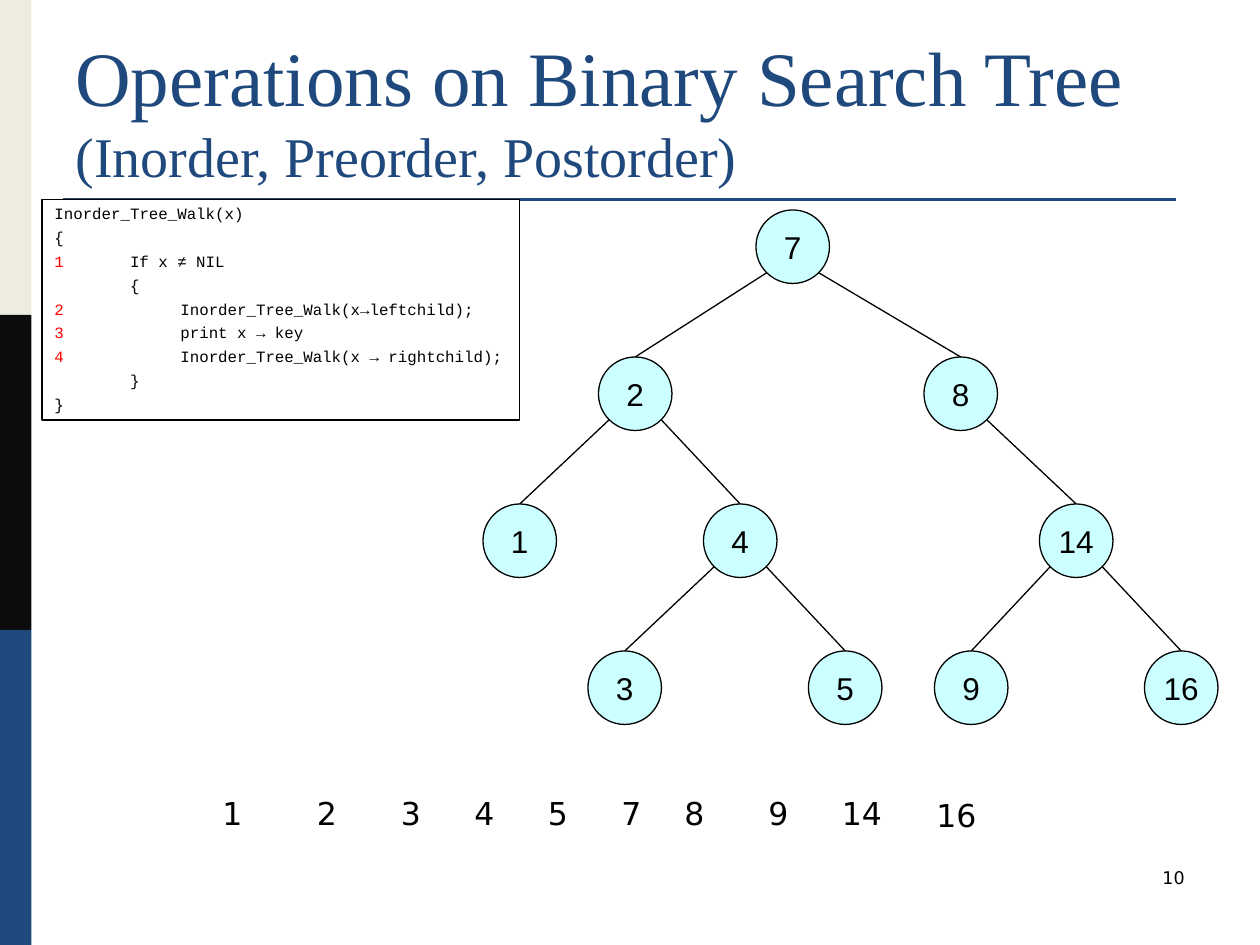
import math

import pptx
import pptx.dml.color
import pptx.enum.shapes
import pptx.enum.text
import pptx.oxml
import pptx.oxml.ns
import pptx.util

Pt = pptx.util.Pt
SHAPE = pptx.enum.shapes.MSO_SHAPE
ALIGN = pptx.enum.text.PP_ALIGN
ANCHOR = pptx.enum.text.MSO_ANCHOR

THEME = {
    "navy": "1F497D", "cream": "EEECE1", "ink": "0C0C0C", "black": "000000",
    "white": "FFFFFF", "red": "FF0000", "node": "CCFFFF",
    "title": 44, "subtitle": 32, "label": 18, "page": 10, "code": 9,
    "serif": "Times New Roman", "sans": "Arial", "mono": "Courier New", "plain": "DejaVu Sans",
}

TITLE = "Operations on Binary Search Tree"
SUBTITLE = "(Inorder, Preorder, Postorder)"
PAGE = "10"
BANDS = ["cream", "ink", "navy"]

# line number, indent level, code
CODE = [
    ("", 0, "Inorder_Tree_Walk(x)"),
    ("", 0, "{"),
    ("1", 1, "If x ≠ NIL"),
    ("", 1, "{"),
    ("2", 2, "Inorder_Tree_Walk(x→leftchild);"),
    ("3", 2, "print x → key"),
    ("4", 2, "Inorder_Tree_Walk(x → rightchild);"),
    ("", 1, "}"),
    ("", 0, "}"),
]
INDENTS = [0, 43.2, 72]

# key: (left edge, depth, parent key)
TREE = {
    7: (432, 0, None),
    2: (342, 1, 7), 8: (528, 1, 7),
    1: (276, 2, 2), 4: (402, 2, 2), 14: (594, 2, 8),
    3: (336, 3, 4), 5: (462, 3, 4), 9: (534, 3, 14), 16: (654, 3, 14),
}
NODE, TREE_TOP, LEVEL = 42, 120, 84

# left edge of each key in the printed order
OUTPUT_LEFTS = [120, 174, 222, 264, 306, 348, 384, 432, 474, 528]
OUTPUT_TOP = 450


def rgb(name):
    return pptx.dml.color.RGBColor.from_string(THEME[name])


def write(p, text, size="label", font="plain", color="black", align=None):
    """Append one formatted run to paragraph p."""
    r = p.add_run()
    r.text = text
    r.font.size = Pt(THEME[size])
    r.font.name = THEME[font]
    r.font.color.rgb = rgb(color)
    if align is not None:
        p.alignment = align


def add_shape(slide, kind, box, fill, line=None):
    sp = slide.shapes.add_shape(kind, *map(Pt, box))
    sp.shadow.inherit = False
    sp.fill.solid()
    sp.fill.fore_color.rgb = rgb(fill)
    if line:
        sp.line.color.rgb = rgb(line)
        sp.line.width = Pt(0.75)
    else:
        sp.line.fill.background()
    return sp


def add_line(slide, start, end, color="black", width=0.75):
    line = slide.shapes.add_connector(
        pptx.enum.shapes.MSO_CONNECTOR.STRAIGHT, *map(Pt, start + end))
    line.line.color.rgb = rgb(color)
    line.line.width = Pt(width)
    line._element.spPr.append(pptx.oxml.parse_xml(
        "<a:effectLst %s/>" % pptx.oxml.ns.nsdecls("a")))
    return line


def add_text_box(slide, box):
    tf = slide.shapes.add_textbox(*map(Pt, box)).text_frame
    tf.word_wrap = True
    return tf


def set_tab(p, position):
    p._p.get_or_add_pPr().append(pptx.oxml.parse_xml(
        '<a:tabLst %s><a:tab pos="%d" algn="l"/></a:tabLst>'
        % (pptx.oxml.ns.nsdecls("a"), Pt(position))))


def add_frame(slide):
    for i, color in enumerate(BANDS):
        add_shape(slide, SHAPE.RECTANGLE, (0, 180 * i, 18, 180), color)
    add_line(slide, (36, 114), (672, 114), "navy", 1.5)

    tf = add_text_box(slide, (36, 21.6, 648, 90))
    tf.vertical_anchor = ANCHOR.BOTTOM
    p = tf.paragraphs[0]
    write(p, TITLE, size="title", font="serif", color="navy")
    p.add_line_break()
    write(p, SUBTITLE, size="subtitle", font="serif", color="navy")

    tf = add_text_box(slide, (516, 492, 168, 36))
    write(tf.paragraphs[0], PAGE, size="page", align=ALIGN.RIGHT)


def add_tree(slide):
    nodes = {}
    for key, (left, depth, parent) in TREE.items():
        box = (left, TREE_TOP + LEVEL * depth, NODE, NODE)
        sp = nodes[key] = add_shape(slide, SHAPE.OVAL, box, "node", "black")
        tf = sp.text_frame
        tf.word_wrap = False
        tf.vertical_anchor = ANCHOR.MIDDLE
        write(tf.paragraphs[0], str(key), font="sans", align=ALIGN.CENTER)
        if parent is None:
            continue
        # The edge leaves the parent's circle at 45 degrees below its centre.
        top = nodes[parent]
        reach = NODE / 2 * math.sqrt(0.5)
        side = -1 if key < parent else 1
        start = (top.left.pt + NODE / 2 + side * reach, top.top.pt + NODE / 2 + reach)
        edge = add_line(slide, start, (left + NODE / 2, box[1]))
        edge.end_connect(sp, 0)


def add_output(slide):
    for key, left in zip(sorted(TREE), OUTPUT_LEFTS):
        top = OUTPUT_TOP + (1.5 if key == max(TREE) else 0)
        write(add_text_box(slide, (left, top, 48, 28.8)).paragraphs[0], str(key))


def add_code(slide):
    sp = add_shape(slide, SHAPE.RECTANGLE, (24, 114, 273, 126), "white", "black")
    tf = sp.text_frame
    tf.vertical_anchor = ANCHOR.TOP
    for i, (number, level, code) in enumerate(CODE):
        p = tf.add_paragraph() if i else tf.paragraphs[0]
        p.alignment = ALIGN.LEFT
        p.line_spacing = 0.9
        p.space_before = Pt(3.9)
        if level:
            set_tab(p, INDENTS[level])
            write(p, number + "\t", size="code", font="mono", color="red")
        write(p, code, size="code", font="mono")


def main():
    prs = pptx.Presentation()
    prs.slide_width, prs.slide_height = Pt(720), Pt(540)
    slide = prs.slides.add_slide(prs.slide_layouts[6])
    add_frame(slide)
    add_tree(slide)
    add_output(slide)
    add_code(slide)
    prs.save("out.pptx")


if __name__ == "__main__":
    main()
